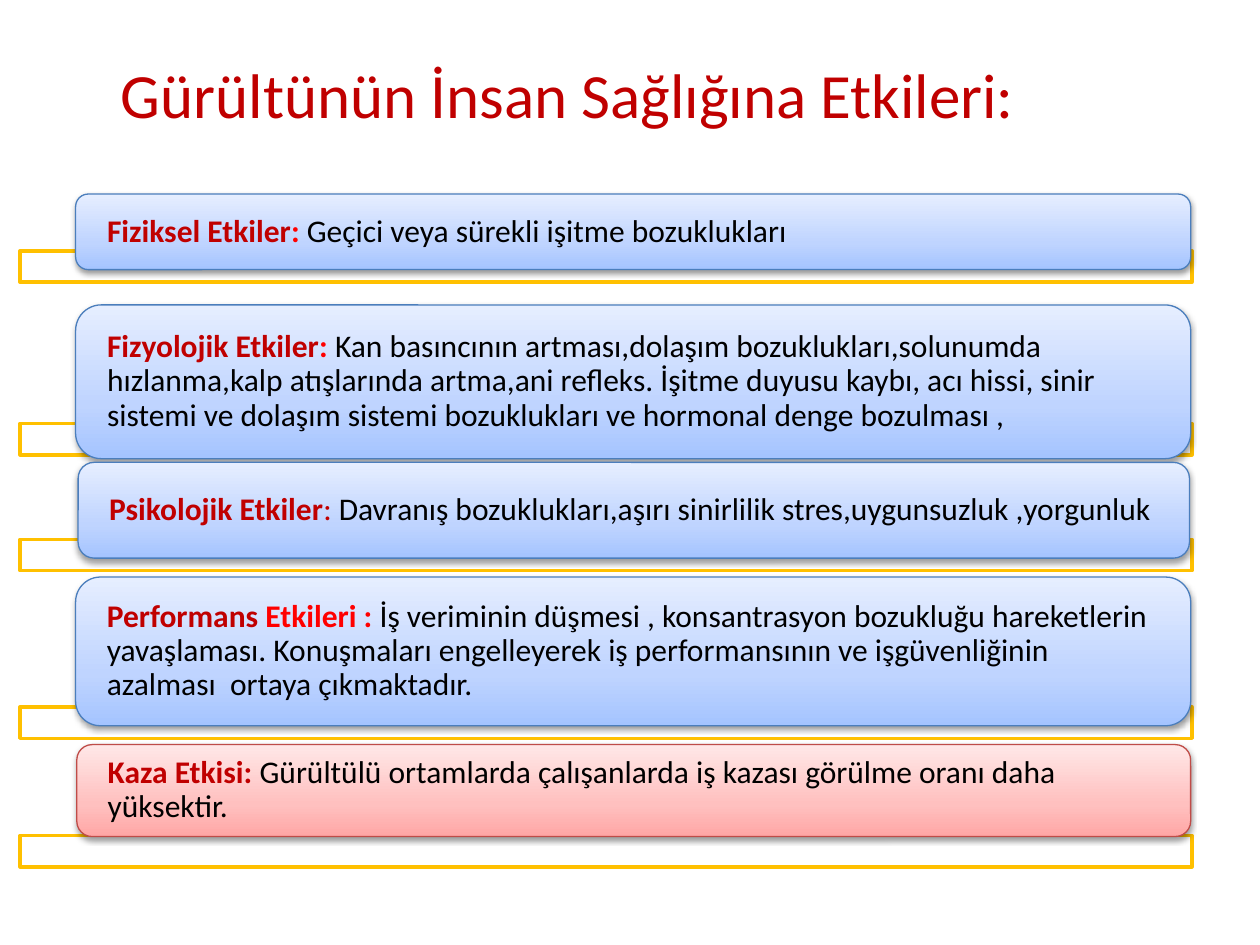
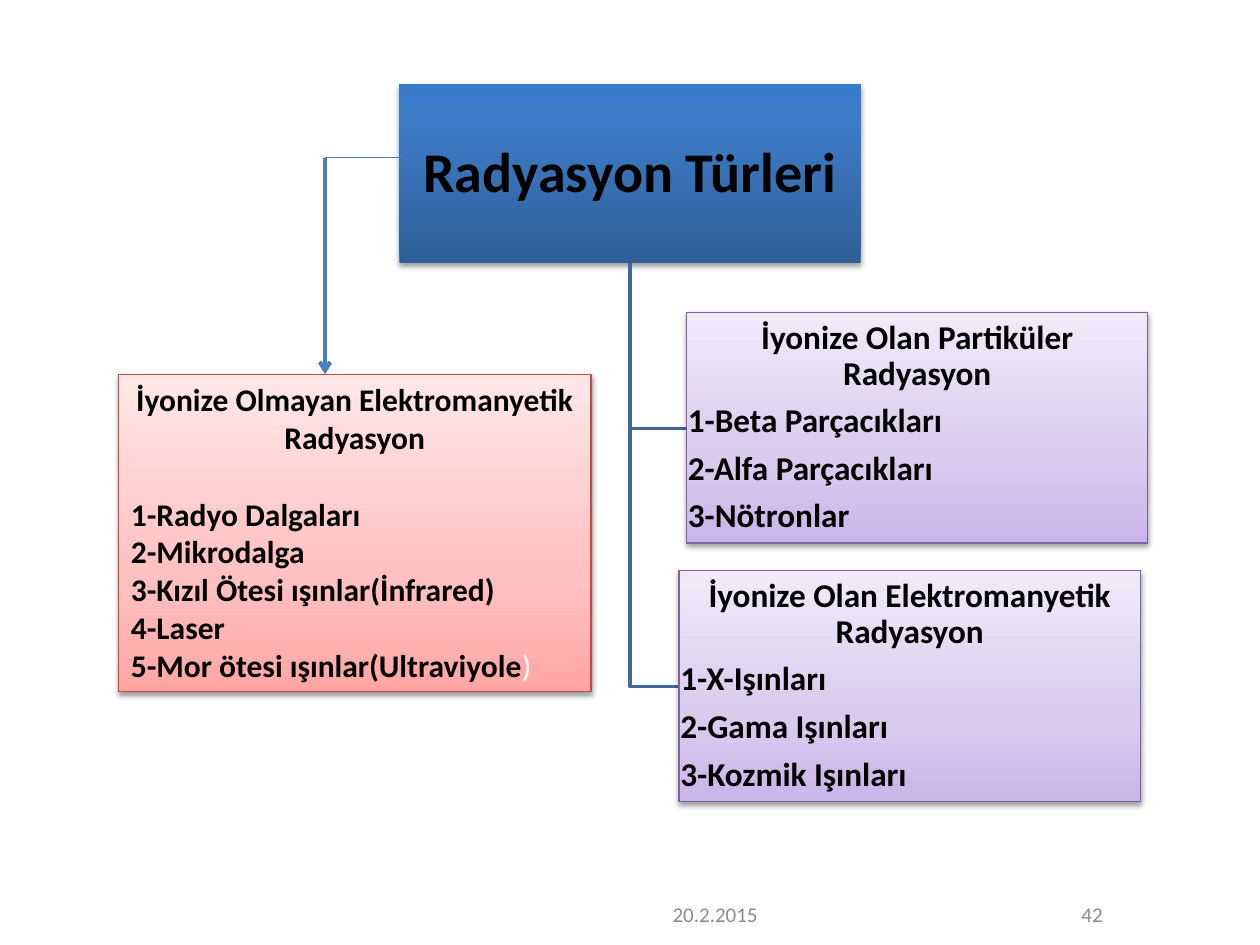
"""Build two slides on the effects of noise and the kinds of radiation."""
from dataclasses import dataclass, field

from lxml.etree import SubElement
from pptx import Presentation
from pptx.dml.color import RGBColor
from pptx.enum.shapes import MSO_CONNECTOR, MSO_SHAPE
from pptx.enum.text import MSO_ANCHOR, MSO_AUTO_SIZE, PP_ALIGN
from pptx.oxml.ns import qn
from pptx.util import Pt

SCALE = 9144
LEFT, MID, RIGHT = PP_ALIGN.LEFT, PP_ALIGN.CENTER, PP_ALIGN.RIGHT
TOP, HALF = MSO_ANCHOR.TOP, MSO_ANCHOR.MIDDLE


@dataclass(frozen=True)
class Tone:
    stops: tuple
    edge: str = ""


@dataclass(frozen=True)
class Theme:
    font: str = "Calibri"
    black: str = "000000"
    white: str = "FFFFFF"
    red: str = "C00000"
    gold: str = "FFC000"
    gray: str = "8C8C8C"
    branch: str = "3F6797"
    arrow: str = "4B7EBC"
    title: int = 36
    root: int = 32
    leaf: int = 19
    body: int = 18
    note: int = 12
    blue: Tone = Tone(((0, "A4C4FF"), (35, "BFD4FF"), (100, "E6EEFF")), "4B7EBC")
    rose: Tone = Tone(((0, "FFA6A5"), (35, "FFC0BF"), (100, "FFE7E7")), "BF4C48")
    lilac: Tone = Tone(((0, "C9B5E8"), (35, "D8CBEE"), (100, "F0EAF9")), "7D60A0")
    deep: Tone = Tone(((0, "2F5F99"), (80, "3D7CC7"), (100, "3A7CCB")))
    marks: dict = field(default_factory=lambda: {
        "head": ("C00000", True), "hot": ("FF0000", True),
        "thin": ("C00000", False), "plain": ("000000", False),
        "bold": ("000000", True), "pale": ("FFFFFF", False)})


def px(*nums):
    return [round(num * SCALE) for num in nums]


def tint(color, code):
    color.rgb = RGBColor.from_string(code)


class Deck:
    """Hold the style and the current slide."""

    def __init__(self, theme):
        self.theme = theme
        self.prs = Presentation()
        self.prs.slide_width, self.prs.slide_height = px(1000, 750)

    def page(self):
        self.slide = self.prs.slides.add_slide(self.prs.slide_layouts[5])
        self.shapes = self.slide.shapes

    def frame(self, shape, inset=(10, 5), anchor=HALF):
        frame = shape.text_frame
        frame.word_wrap = True
        frame.auto_size = MSO_AUTO_SIZE.NONE
        frame.vertical_anchor = anchor
        side, edge = px(*inset)
        frame.margin_left = frame.margin_right = side
        frame.margin_top = frame.margin_bottom = edge

    def letter(self, shape, lines, size, color=None, bold=False,
               align=LEFT, tight=False, gap=0):
        frame = shape.text_frame
        for num, line in enumerate(lines):
            para = frame.add_paragraph() if num else frame.paragraphs[0]
            para.alignment = align
            para.space_before, para.space_after = Pt(0), Pt(gap)
            para.line_spacing = 0.9 if tight else 1.0
            para.font.name, para.font.size = self.theme.font, Pt(size)
            if isinstance(line, str):
                para.font.bold = bold
                tint(para.font.color, color or self.theme.black)
                para.add_run().text = line
                continue
            for mark, text in line:
                run = para.add_run()
                run.text = text
                code, run.font.bold = self.theme.marks[mark]
                tint(run.font.color, code)
        return frame.paragraphs

    def paint(self, shape, tone):
        shape.fill.gradient()
        shape.fill.gradient_angle = 90
        stops = shape.element.spPr.find(".//" + qn("a:gsLst"))
        for stop in list(stops):
            stops.remove(stop)
        for spot, code in tone.stops:
            stop = SubElement(stops, qn("a:gs"), pos=str(spot * 1000))
            SubElement(stop, qn("a:srgbClr"), val=code)
        if tone.edge:
            self.stroke(shape, tone.edge, 0.75)
        else:
            shape.line.fill.background()
        shape.shadow.inherit = False
        glow = shape.element.spPr.find(qn("a:effectLst"))
        cast = SubElement(glow, qn("a:outerShdw"), blurRad="40000",
                          dist="20000", dir="5400000", rotWithShape="0")
        shade = SubElement(cast, qn("a:srgbClr"), val=self.theme.black)
        SubElement(shade, qn("a:alpha"), val="38000")

    def stroke(self, shape, code, width):
        tint(shape.line.color, code)
        shape.line.width = Pt(width)

    def title(self, box, text, size, **style):
        shape = self.shapes.title
        shape.left, shape.top, shape.width, shape.height = px(*box)
        self.letter(shape, [text], size, **style)
        return shape

    def box(self, box, tone, kind=MSO_SHAPE.RECTANGLE):
        shape = self.shapes.add_shape(kind, *px(*box))
        self.paint(shape, tone)
        return shape

    def bar(self, box):
        shape = self.shapes.add_shape(MSO_SHAPE.RECTANGLE, *px(*box))
        shape.shadow.inherit = False
        shape.fill.solid()
        tint(shape.fill.fore_color, self.theme.white)
        self.stroke(shape, self.theme.gold, 2)

    def band(self, box, tone, parts):
        shape = self.box(box, tone, MSO_SHAPE.ROUNDED_RECTANGLE)
        self.frame(shape, (25 - round(box[3] * 0.05), 0))
        self.letter(shape, [parts], self.theme.body, tight=True)

    def leaf(self, box, head, items):
        shape = self.box(box, self.theme.lilac)
        self.frame(shape, (1, 1))
        size = self.theme.leaf
        paras = self.letter(shape, [head, *items], size, bold=True,
                            tight=True, gap=0.35 * size)
        paras[0].alignment = MID

    def card(self, box, head, items):
        shape = self.box(box, self.theme.rose)
        self.frame(shape, anchor=TOP)
        paras = self.letter(shape, [head, *items], self.theme.body, bold=True)
        paras[0].alignment = MID
        paras[1].space_before = Pt(22)

    def note(self, box, text, align=LEFT):
        shape = self.shapes.add_textbox(*px(*box))
        self.frame(shape)
        self.letter(shape, [text], self.theme.note, self.theme.gray, align=align)

    def elbow(self, start, end):
        pen = self.shapes.build_freeform(*start, scale=SCALE)
        pen.add_line_segments([(start[0], end[1]), end], close=False)
        shape = pen.convert_to_shape()
        shape.shadow.inherit = False
        shape.fill.background()
        self.stroke(shape, self.theme.branch, 2)

    def line(self, start, end, width, arrow=False):
        line = self.shapes.add_connector(MSO_CONNECTOR.STRAIGHT, *px(*start, *end))
        self.stroke(line, self.theme.arrow, width)
        props = line.element.spPr
        if arrow:
            SubElement(props.find(qn("a:ln")), qn("a:tailEnd"), type="arrow")
        SubElement(props, qn("a:effectLst"))


def noise(deck):
    theme = deck.theme
    deck.page()
    title = deck.title((86, 39, 789, 118), "Gürültünün İnsan Sağlığına Etkileri:",
                       theme.title, color=theme.red)
    deck.frame(title, anchor=TOP)
    bands = [
        (199, (60, 154, 885, 60), theme.blue,
         [("head", "Fiziksel Etkiler"), ("hot", ": "),
          ("plain", "Geçici veya sürekli işitme bozuklukları")]),
        (336, (60, 242, 885, 122), theme.blue,
         [("head", "Fizyolojik Etkiler"), ("hot", ": "),
          ("plain", "Kan basıncının artması,dolaşım bozuklukları,solunumda "
           "hızlanma,kalp atışlarında artma,ani refleks. İşitme duyusu kaybı, "
           "acı hissi, sinir sistemi ve dolaşım sistemi bozuklukları ve "
           "hormonal denge bozulması ,")]),
        (428, (62, 367, 882, 76), theme.blue,
         [("head", "Psikolojik Etkiler"), ("thin", ": "),
          ("plain", "Davranış bozuklukları,aşırı sinirlilik "
           "stres,uygunsuzluk ,yorgunluk")]),
        (561, (60, 458, 885, 118), theme.blue,
         [("head", "Performans "), ("hot", "Etkileri : "),
          ("plain", "İş veriminin düşmesi , konsantrasyon bozukluğu "
           "hareketlerin yavaşlaması. Konuşmaları engelleyerek iş "
           "performansının ve işgüvenliğinin azalması  ortaya çıkmaktadır.")]),
        (663, (61, 591, 884, 73), theme.rose,
         [("head", "Kaza Etkisi: "),
          ("plain", "Gürültülü ortamlarda çalışanlarda iş kazası görülme "
           "oranı daha yüksektir.")]),
    ]
    for top, box, tone, parts in bands:
        deck.bar((16, top, 930, 25))
        deck.band(box, tone, parts)


def rays(deck):
    theme = deck.theme
    deck.page()
    root = deck.title((317, 67, 366, 142), "Radyasyon Türleri", theme.root,
                      bold=True, align=MID, tight=True)
    deck.frame(root, (2, 2))
    deck.paint(root, theme.deep)
    deck.note((524, 709, 233, 33), "20.2.2015")
    deck.note((830, 709, 55, 33), "42", RIGHT)
    leaves = [
        (545, 248, "İyonize Olan Partiküler Radyasyon",
         ["1-Beta Parçacıkları", "2-Alfa Parçacıkları", "3-Nötronlar"]),
        (539, 453, "İyonize Olan Elektromanyetik Radyasyon",
         ["1-X-Işınları", "2-Gama Işınları", "3-Kozmik Işınları"]),
    ]
    for left, top, head, items in leaves:
        deck.elbow((500, 209), (left, top + 92))
        deck.leaf((left, top, 366, 183), head, items)
    deck.card((94, 297, 375, 252), "İyonize Olmayan Elektromanyetik Radyasyon",
              ["1-Radyo Dalgaları", "2-Mikrodalga",
               "3-Kızıl Ötesi ışınlar(İnfrared)", "4-Laser",
               [("bold", "5-Mor ötesi ışınlar(Ultraviyole"), ("pale", ")")]])
    deck.line((258, 125), (258, 297), 2.25, arrow=True)
    deck.line((258, 125), (320, 125), 1)


def main():
    deck = Deck(Theme())
    noise(deck)
    rays(deck)
    deck.prs.save("out.pptx")


if __name__ == "__main__":
    main()
